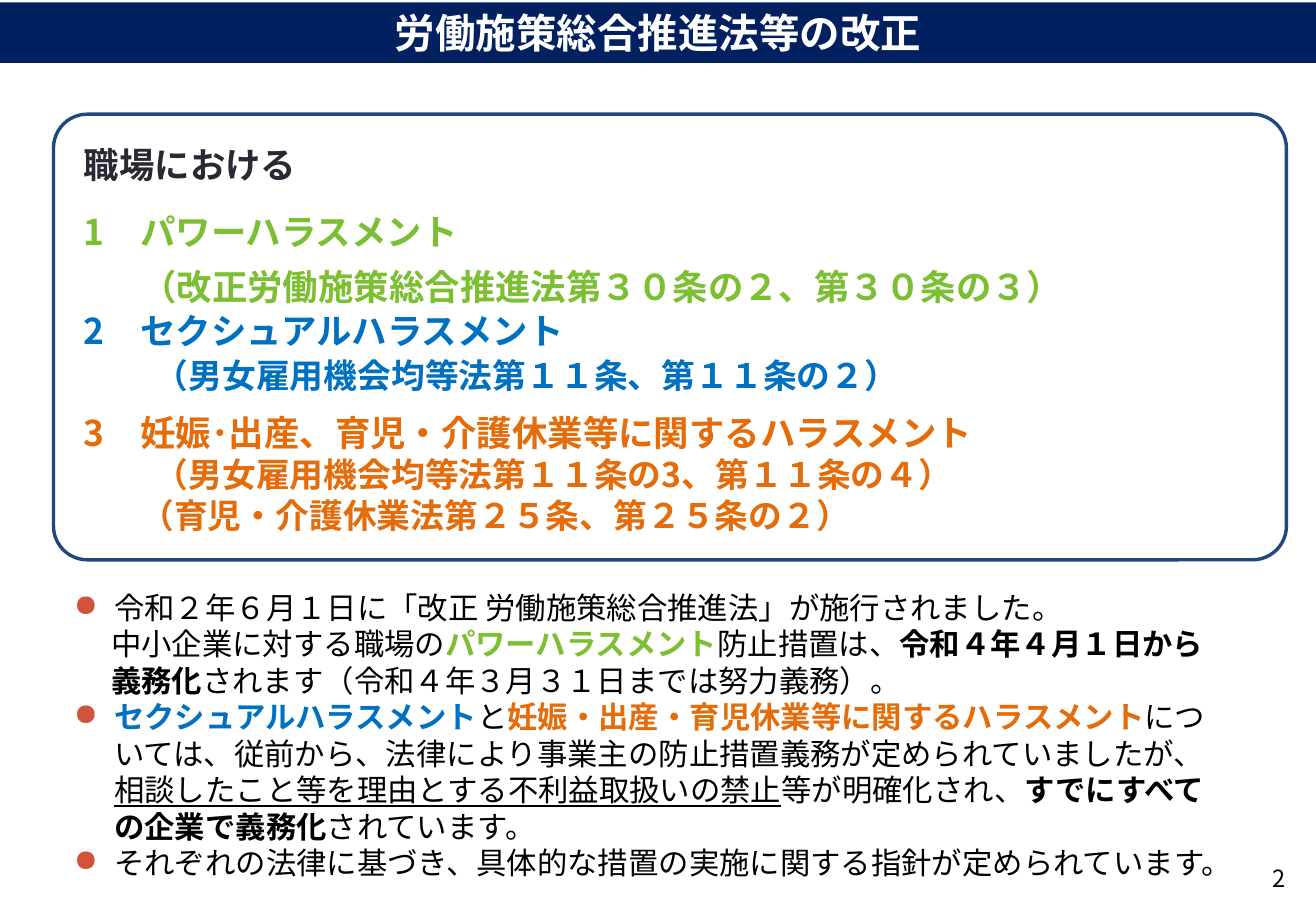
from dataclasses import dataclass

from lxml import etree
from pptx import Presentation
from pptx.dml.color import RGBColor
from pptx.enum.shapes import MSO_SHAPE
from pptx.enum.text import MSO_ANCHOR, PP_ALIGN
from pptx.oxml.ns import qn
from pptx.util import Pt

RECTANGLE, ROUNDED = MSO_SHAPE.RECTANGLE, MSO_SHAPE.ROUNDED_RECTANGLE
TOP, MIDDLE = MSO_ANCHOR.TOP, MSO_ANCHOR.MIDDLE
LEFT, CENTER, RIGHT = PP_ALIGN.LEFT, PP_ALIGN.CENTER, PP_ALIGN.RIGHT


@dataclass(frozen=True)
class Theme:
    font: str = "Noto Sans CJK JP"
    navy: str = "002060"
    frame: str = "1F497D"
    heading: str = "292934"
    power: str = "7CBF33"
    sexual: str = "0070C0"
    family: str = "E46C0A"
    bullet: str = "D2533C"
    black: str = "000000"
    white: str = "FFFFFF"
    title_size: float = 24
    law_size: float = 21
    article_size: float = 20
    body_size: float = 18
    number_size: float = 14
    line_height: float = 1.2


THEME = Theme()


@dataclass(frozen=True)
class Run:
    text: str
    color: str = THEME.black
    bold: bool = False
    underline: bool = False


@dataclass(frozen=True)
class Line:
    runs: tuple[Run, ...]
    size: float = THEME.body_size
    indent: float = 0
    before: float = 0
    bullet: bool = False
    align: PP_ALIGN = LEFT
    fixed_height: bool = True


@dataclass(frozen=True)
class Box:
    left: float
    top: float
    width: float
    height: float


def add_run(paragraph, run: Run, size: float) -> None:
    piece = paragraph.add_run()
    piece.text = run.text
    font = piece.font
    font.size, font.bold, font.underline = Pt(size), run.bold, run.underline
    font.color.rgb = RGBColor.from_string(run.color)
    font.name = THEME.font
    properties = piece._r.get_or_add_rPr()
    properties.set("lang", "ja-JP")
    etree.SubElement(properties, qn("a:ea")).set("typeface", THEME.font)


def add_bullet(properties) -> None:
    color = etree.SubElement(properties, qn("a:buClr"))
    etree.SubElement(color, qn("a:srgbClr")).set("val", THEME.bullet)
    etree.SubElement(properties, qn("a:buChar")).set("char", "●")


def write_lines(frame, lines: list[Line], anchor: MSO_ANCHOR, margins: tuple[float, float]) -> None:
    frame.word_wrap = True
    frame.vertical_anchor = anchor
    frame.margin_left = frame.margin_right = Pt(margins[0])
    frame.margin_top = frame.margin_bottom = Pt(margins[1])
    for index, line in enumerate(lines):
        paragraph = frame.add_paragraph() if index else frame.paragraphs[0]
        paragraph.alignment = line.align
        paragraph.space_before = Pt(line.before)
        if line.fixed_height:
            paragraph.line_spacing = Pt(line.size * THEME.line_height)
        properties = paragraph._p.get_or_add_pPr()
        properties.set("marL", str(Pt(line.indent)))
        properties.set("indent", str(Pt(-line.indent if line.bullet else 0)))
        if line.bullet:
            add_bullet(properties)
        for run in line.runs:
            add_run(paragraph, run, line.size)


def add_text(slide, box: Box, lines: list[Line], anchor: MSO_ANCHOR = TOP,
             margins: tuple[float, float] = (6.5, 2.9)) -> None:
    text = slide.shapes.add_textbox(Pt(box.left), Pt(box.top), Pt(box.width), Pt(box.height))
    write_lines(text.text_frame, lines, anchor, margins)


def add_panel(slide, kind: MSO_SHAPE, box: Box):
    panel = slide.shapes.add_shape(kind, Pt(box.left), Pt(box.top), Pt(box.width), Pt(box.height))
    panel.shadow.inherit = False
    return panel


def law(text: str, color: str, before: float) -> Line:
    return Line((Run(text, color, True),), THEME.law_size, before=before)


def article(text: str, color: str, indent: float, before: float = 0,
            size: float = THEME.article_size) -> Line:
    return Line((Run(text, color, True),), size, indent, before)


HARASSMENT_LAWS = [
    law("職場における", THEME.heading, 0),
    law("1　パワーハラスメント", THEME.power, 14.4),
    article("（改正労働施策総合推進法第３０条の２、第３０条の３）", THEME.power, 34, 7.2, THEME.law_size),
    law("2　セクシュアルハラスメント", THEME.sexual, 1),
    article("（男女雇用機会均等法第１１条、第１１条の２）", THEME.sexual, 42, 2),
    law("3　妊娠･出産、育児・介護休業等に関するハラスメント", THEME.family, 9.4),
    article("（男女雇用機会均等法第１１条の3、第１１条の４）", THEME.family, 42),
    article("（育児・介護休業法第２５条、第２５条の２）", THEME.family, 33.5),
]

ENFORCEMENT = [
    Line((Run("令和２年６月１日に「改正 労働施策総合推進法」が施行されました。"),), indent=23.8, bullet=True),
    Line((Run("中小企業に対する職場の"),
          Run("パワーハラスメント", THEME.power, True),
          Run("防止措置は、"),
          Run("令和４年４月１日から", bold=True)), indent=22),
    Line((Run("義務化", bold=True),
          Run("されます（令和４年３月３１日までは努力義務）。")), indent=22),
    Line((Run("セクシュアルハラスメント", THEME.sexual, True),
          Run("と"),
          Run("妊娠・出産・育児休業等に関するハラスメント", THEME.family, True),
          Run("については、従前から、法律により事業主の防止措置義務が定められていましたが、"),
          Run("相談したこと等を理由とする不利益取扱いの禁止", underline=True),
          Run("等が明確化され、"),
          Run("すでにすべての企業で義務化", bold=True),
          Run("されています。")), indent=23.8, bullet=True),
    Line((Run("それぞれの法律に基づき、具体的な措置の実施に関する指針が定められています。"),),
         indent=23.8, bullet=True),
]


def main() -> None:
    deck = Presentation()
    deck.slide_width, deck.slide_height = Pt(780), Pt(540)
    slide = deck.slides.add_slide(deck.slide_layouts[6])

    # Laws on each kind of harassment, and their enforcement
    add_text(slide, Box(43.2, 82.1, 718.6, 249.8), HARASSMENT_LAWS)
    add_text(slide, Box(37.4, 346.3, 698.4, 180.7), ENFORCEMENT)

    # Frame around the laws
    law_frame = add_panel(slide, ROUNDED, Box(31.7, 67.7, 730.8, 264.2))
    law_frame.adjustments[0] = 0.076
    law_frame.fill.background()
    law_frame.line.color.rgb = RGBColor.from_string(THEME.frame)
    law_frame.line.width = Pt(2)

    # Page number
    page = Line((Run("2"),), THEME.number_size, align=RIGHT, fixed_height=False)
    add_text(slide, Box(684.7, 507.6, 84.2, 25.9), [page], MIDDLE, (7.2, 3.6))

    # Title band
    band = add_panel(slide, RECTANGLE, Box(0, 1.4, 780, 36))
    band.fill.solid()
    band.fill.fore_color.rgb = RGBColor.from_string(THEME.navy)
    band.line.fill.background()
    title = Line((Run("労働施策総合推進法等の改正", THEME.white, True),), THEME.title_size,
                 align=CENTER, fixed_height=False)
    write_lines(band.text_frame, [title], MIDDLE, (7.2, 3.6))

    deck.save("out.pptx")


if __name__ == "__main__":
    main()
